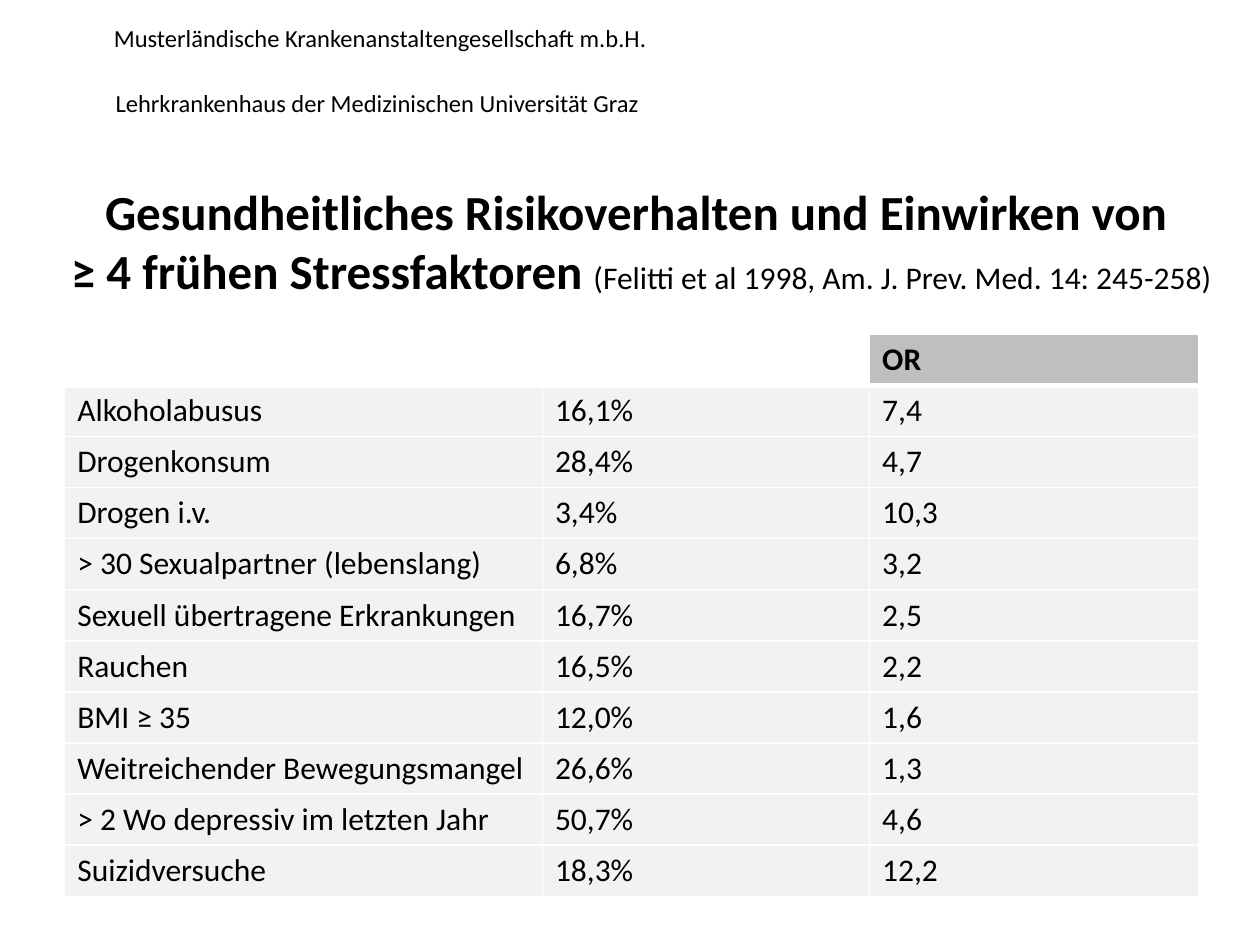
from pptx import Presentation
from pptx.dml.color import RGBColor
from pptx.enum.text import MSO_ANCHOR, MSO_AUTO_SIZE, PP_ALIGN
from pptx.oxml import parse_xml
from pptx.oxml.ns import nsdecls
from pptx.util import Pt

BLACK = RGBColor(0x00, 0x00, 0x00)
HEADER_GREY = RGBColor(0xBF, 0xBF, 0xBF)
ROW_GREY = RGBColor(0xF2, 0xF2, 0xF2)
BORDER_WHITE = RGBColor(0xFF, 0xFF, 0xFF)


def format_font(font, size, bold=False):
    font.color.rgb = BLACK
    values = {"name": "Calibri", "size": Pt(size), "bold": bold}
    for name, value in values.items():
        setattr(font, name, value)


def add_border(cell, side, width):
    cell._tc.get_or_add_tcPr().append(parse_xml(
        f'<a:{side} {nsdecls("a")} w="{Pt(width)}"><a:solidFill>'
        f'<a:srgbClr val="{BORDER_WHITE}"/></a:solidFill></a:{side}>'
    ))


deck = Presentation()
deck.slide_width = Pt(720)
deck.slide_height = Pt(540)
page = deck.slides.add_slide(deck.slide_layouts[5])

letterhead = [
    ("Musterländische Krankenanstaltengesellschaft m.b.H.", 58, 9.5),
    ("Lehrkrankenhaus der Medizinischen Universität Graz", 59, 47),
]
for text, left, top in letterhead:
    box = page.shapes.add_textbox(Pt(left), Pt(top), Pt(335), Pt(24.5))
    box.text_frame.word_wrap = True
    paragraph = box.text_frame.paragraphs[0]
    span = paragraph.add_run()
    span.text = text
    format_font(span.font, 14)

title = page.shapes.title
title_place = {"left": Pt(31), "top": Pt(100), "width": Pt(671), "height": Pt(90)}
for name, value in title_place.items():
    setattr(title, name, value)
title_frame = {
    "word_wrap": True,
    "auto_size": MSO_AUTO_SIZE.NONE,
    "vertical_anchor": MSO_ANCHOR.TOP,
}
for name, value in title_frame.items():
    setattr(title.text_frame, name, value)
heading = title.text_frame.paragraphs[0]
heading.alignment = PP_ALIGN.CENTER
title_spans = [
    ("Gesundheitliches Risikoverhalten und Einwirken von ", 28, True),
    ("≥ 4 frühen Stressfaktoren ", 28, True),
    ("(Felitti et al 1998, Am. J. Prev. Med. 14: 245-258)", 18, False),
]
for index, (text, size, bold) in enumerate(title_spans):
    if index == 1:
        heading.add_line_break()
    span = heading.add_run()
    span.text = text
    format_font(span.font, size, bold)

risk_rows = [
    ("", "", "OR"),
    ("Alkoholabusus", "16,1%", "7,4"),
    ("Drogenkonsum", "28,4%", "4,7"),
    ("Drogen i.v.", "3,4%", "10,3"),
    ("> 30 Sexualpartner (lebenslang)", "6,8%", "3,2"),
    ("Sexuell übertragene Erkrankungen", "16,7%", "2,5"),
    ("Rauchen", "16,5%", "2,2"),
    ("BMI ≥ 35", "12,0%", "1,6"),
    ("Weitreichender Bewegungsmangel", "26,6%", "1,3"),
    ("> 2 Wo depressiv im letzten Jahr", "50,7%", "4,6"),
    ("Suizidversuche", "18,3%", "12,2"),
]
column_widths = [273, 187, 188]
row_height = 29.2
table = page.shapes.add_table(
    len(risk_rows), len(column_widths), Pt(37), Pt(191),
    Pt(sum(column_widths)), Pt(row_height * len(risk_rows)),
).table
for column, width in zip(table.columns, column_widths):
    column.width = Pt(width)

for row_index, values in enumerate(risk_rows):
    table.rows[row_index].height = Pt(row_height)
    is_header = row_index == 0
    for column_index, text in enumerate(values):
        cell = table.cell(row_index, column_index)
        for side in ("lnL", "lnR", "lnT", "lnB"):
            header_edge = (row_index, side) in ((0, "lnB"), (1, "lnT"))
            add_border(cell, side, 3 if header_edge else 1)
        if text:
            cell.fill.solid()
            cell.fill.fore_color.rgb = HEADER_GREY if is_header else ROW_GREY
            span = cell.text_frame.paragraphs[0].add_run()
            span.text = text
            format_font(span.font, 18, is_header)
        else:
            cell.fill.background()

deck.save("out.pptx")
